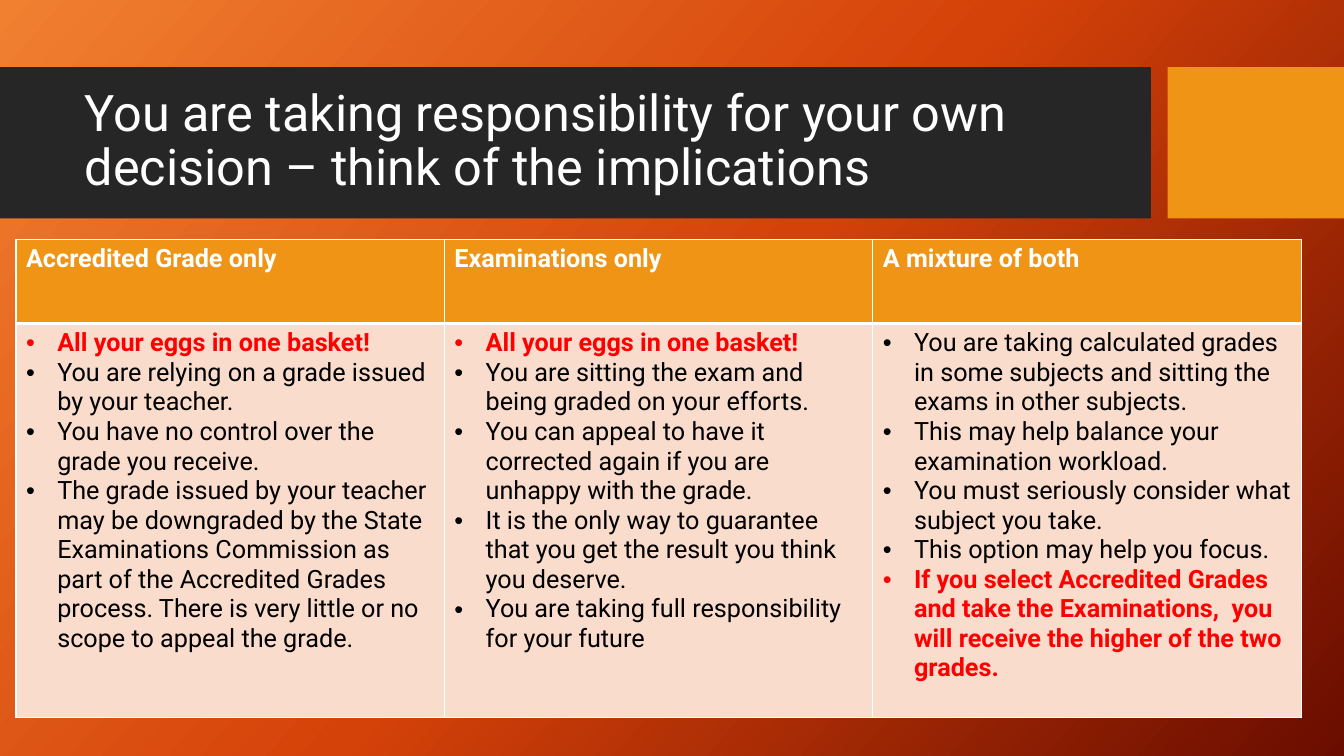
from copy import deepcopy

from lxml import etree
from pptx import Presentation
from pptx.dml.color import RGBColor
from pptx.enum import shapes, text
from pptx.oxml import ns
from pptx import util as u

COLUMNS, ROWS = 160, 90
WHITE, BLACK, RED = "FFFFFF", "000000", "FF0000"
DARK, AMBER, PEACH = "262626", "F09415", "F9DCCC"


def colour(value):
    return RGBColor.from_string(value)


def apply(target, values):
    for name, value in values.items():
        setattr(target, name, value)


class Deck:
    font = "Roboto"
    indent = u.Inches(0.31)

    def __init__(self):
        self.presentation = Presentation()
        apply(self.presentation, {"slide_width": u.Inches(13.33), "slide_height": u.Inches(7.5)})
        self.slide = self.presentation.slides.add_slide(self.presentation.slide_layouts[5])

    def box(self, left, top, width, height):
        across = self.presentation.slide_width / COLUMNS
        down = self.presentation.slide_height / ROWS
        return round(left * across), round(top * down), round(width * across), round(height * down)

    def background(self, stops, angle):
        fill = self.slide.background.fill
        fill.gradient()
        stop_list = self.slide.element.find(".//" + ns.qn("a:gsLst"))
        while len(stop_list) < len(stops):
            stop_list.append(deepcopy(stop_list[0]))
        for stop, (position, value) in zip(fill.gradient_stops, stops):
            stop.position = position
            stop.color.rgb = colour(value)
        fill.gradient_angle = 360 - angle

    def wording(self, paragraph, words, size, value, bold=False):
        run = paragraph.add_run()
        run.text = words
        apply(run.font, {"name": self.font, "size": u.Pt(size), "bold": bold})
        run.font.color.rgb = colour(value)

    def title(self, words, size, *place):
        heading = self.slide.shapes.title
        apply(heading, dict(zip(("left", "top", "width", "height"), self.box(*place))))
        frame = heading.text_frame
        apply(frame, {"word_wrap": True, "auto_size": text.MSO_AUTO_SIZE.NONE,
                      "vertical_anchor": text.MSO_ANCHOR.MIDDLE})
        apply(frame.paragraphs[0], {"alignment": text.PP_ALIGN.LEFT, "line_spacing": 0.9})
        self.wording(frame.paragraphs[0], words, size, WHITE)

    def band(self, value, *place):
        band = self.slide.shapes.add_shape(shapes.MSO_SHAPE.RECTANGLE, *self.box(*place))
        band.shadow.inherit = False
        band.fill.solid()
        band.fill.fore_color.rgb = colour(value)
        band.line.fill.background()
        self.slide.shapes.title.element.addprevious(band.element)

    def bullet(self, paragraph):
        properties = paragraph._p.get_or_add_pPr()
        properties.set("marL", str(self.indent))
        properties.set("indent", str(-self.indent))
        etree.SubElement(properties, ns.qn("a:buFont"), typeface="Arial")
        etree.SubElement(properties, ns.qn("a:buChar"), char="•")

    def cell(self, cell, fill, borders):
        cell.fill.solid()
        cell.fill.fore_color.rgb = colour(fill)
        properties = cell._tc.get_or_add_tcPr()
        for index, (side, width) in enumerate(borders.items()):
            line = etree.Element(ns.qn("a:ln" + side), w=str(u.Pt(width)))
            solid = etree.SubElement(line, ns.qn("a:solidFill"))
            etree.SubElement(solid, ns.qn("a:srgbClr"), val=WHITE)
            properties.insert(index, line)

    def table(self, options, size, heights, *place):
        left, top, width, height = self.box(*place, sum(heights))
        table = self.slide.shapes.add_table(2, len(options), left, top, width, height).table
        apply(table, {"first_row": True, "horz_banding": False})
        for row, share in zip(table.rows, heights):
            row.height = self.box(0, 0, 0, share)[3]
        for column, (option, points) in enumerate(options.items()):
            heading, body = table.cell(0, column), table.cell(1, column)
            self.cell(heading, AMBER, {"L": 1, "R": 1, "T": 1, "B": 3})
            self.cell(body, PEACH, {"L": 1, "R": 1, "T": 3, "B": 1})
            self.wording(heading.text_frame.paragraphs[0], option, size, WHITE, True)
            for index, point in enumerate(points):
                frame = body.text_frame
                paragraph = frame.add_paragraph() if index else frame.paragraphs[0]
                self.bullet(paragraph)
                stressed = point in STRESSED
                self.wording(paragraph, point, size, RED if stressed else BLACK, stressed)


EGGS = "All your eggs in one basket!"
HIGHER = ("If you select Accredited Grades and take the Examinations,  you will receive "
          "the higher of the two grades.")
STRESSED = (EGGS, HIGHER)
OPTIONS = {
    "Accredited Grade only": [
        EGGS,
        "You are relying on a grade issued by your teacher.",
        "You have no control over the grade you receive.",
        "The grade issued by your teacher may be downgraded by the State Examinations "
        "Commission as part of the Accredited Grades process. There is very little or no "
        "scope to appeal the grade.",
    ],
    "Examinations only": [
        EGGS,
        "You are sitting the exam and being graded on your efforts.",
        "You can appeal to have it corrected again if you are unhappy with the grade.",
        "It is the only way to guarantee that you get the result you think you deserve.",
        "You are taking full responsibility for your future",
    ],
    "A mixture of both": [
        "You are taking calculated grades in some subjects and sitting the exams in other "
        "subjects.",
        "This may help balance your examination workload.",
        "You must seriously consider what subject you take.",
        "This option may help you focus.",
        HIGHER,
    ],
}


def main():
    deck = Deck()
    deck.background([(0, "F18031"), (0.5, "D54209"), (1, "6A0D00")], 42)
    deck.band(DARK, 0, 8, 137, 18)
    deck.band(AMBER, 139, 8, 21, 18)
    deck.title("You are taking responsibility for your own decision – think of the implications",
               36, 8.9, 9.8, 126.1, 14.2)
    deck.table(OPTIONS, 18, (10, 46.9), 1.9, 28.5, 153)
    deck.presentation.save("out.pptx")


if __name__ == "__main__":
    main()
